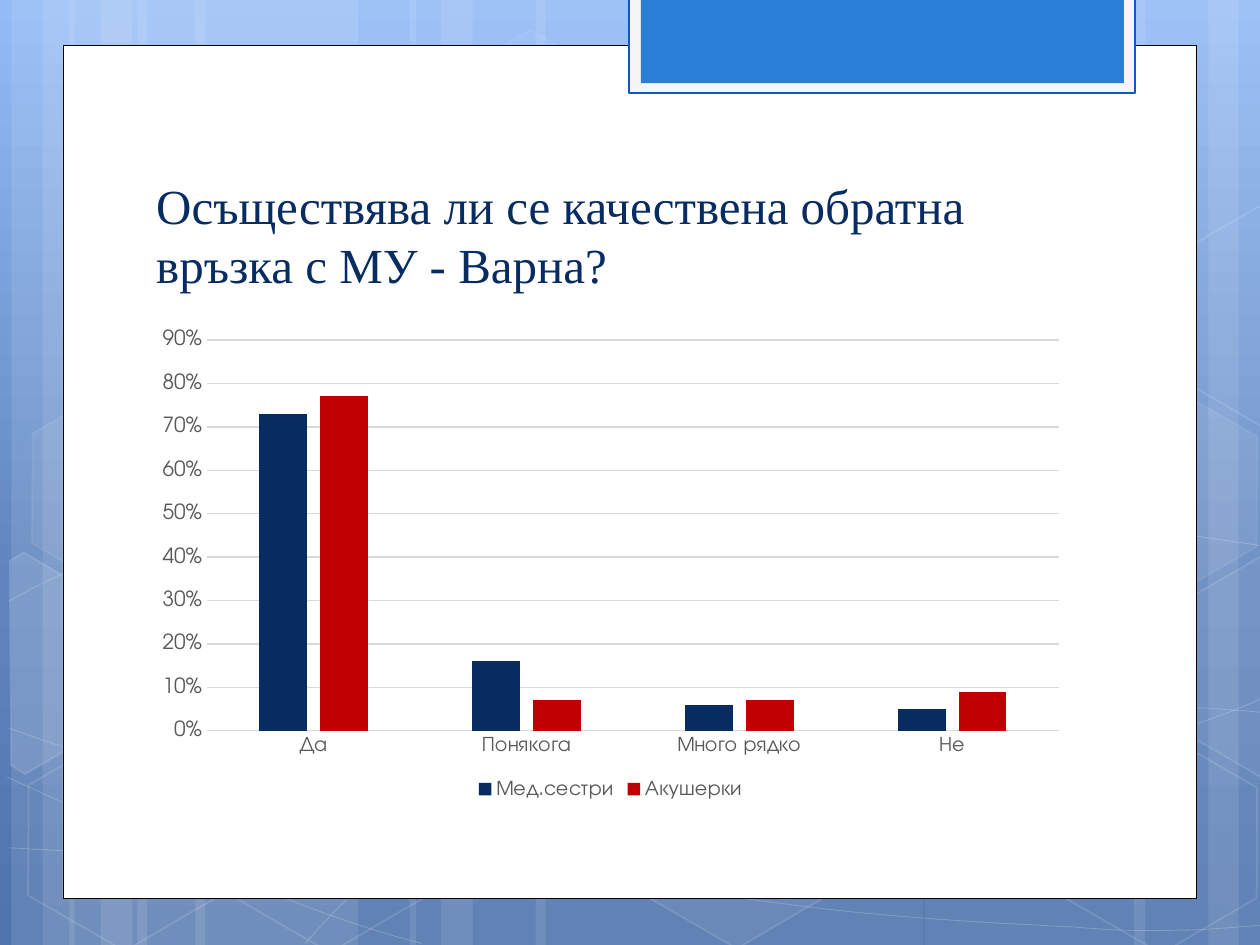
from copy import deepcopy
from math import cos, radians, sin

from lxml import etree
from pptx import Presentation
from pptx import util as u
from pptx.chart import data
from pptx.dml.color import RGBColor
from pptx.enum import chart as ch
from pptx.enum import shapes, text
from pptx.oxml import ns

WHITE = RGBColor(0xFF, 0xFF, 0xFF)
BLACK = RGBColor(0, 0, 0)
NAVY = RGBColor(0x07, 0x2C, 0x62)
RED = RGBColor(0xC0, 0, 0)
BLUE = RGBColor(0x29, 0x7F, 0xD5)
EDGE = RGBColor(0x0E, 0x58, 0xC4)
PALE = RGBColor(0xF5, 0xF5, 0xF5)
GRAY = RGBColor(0x59, 0x59, 0x59)
GRID = RGBColor(0xD9, 0xD9, 0xD9)
SKY = [(0, RGBColor(0x93, 0xBB, 0xF6)), (0.62, RGBColor(0x60, 0x85, 0xBE)),
       (1, RGBColor(0x4F, 0x74, 0xAD))]
FONT = "TeX Gyre Adventor"
WIDE, HIGH, TURN = 25.4, 19.05, 30

BANDS = [(2.77, 4.45), (0.23, 1.27), (0.86, 2.11), (3.94, 4.45), (1.4, 1.27), (2.03, 2.11),
         (18.64, 4.45), (24.36, 1.27), (22.86, 2.11), (10.8, 7.82), (8.26, 1.27), (8.89, 2.11)]
WAVES = [
    [(0.18, 17.09), (1.55, 17.17), (2.92, 17.25), (4.83, 17.22), (6.73, 17.2), (9.09, 17.15),
     (11.63, 16.89), (14.17, 16.64), (17.78, 16.15), (20.12, 15.67), (22.43, 15.19),
     (24.82, 14.43), (25.58, 14)],
    [(0.18, 12.12), (0.91, 11.71), (1.65, 11.33), (3.07, 10.95), (4.52, 10.57), (6.58, 10.01),
     (8.81, 9.83), (11.07, 9.65), (13.82, 9.63), (16.61, 9.83), (19.41, 10.03),
     (24.05, 10.82), (25.58, 11.02)],
    [(0.15, 15.67), (3.23, 17.07), (6.27, 18.47), (8.51, 19.02)],
    [(0.18, 14.68), (0.97, 14.96), (1.78, 15.24), (3.25, 15.65), (4.72, 16.03), (6.93, 16.66),
     (9.07, 17.09), (11.18, 17.53), (13.84, 17.98), (15.95, 18.24), (18.06, 18.52),
     (20.32, 18.62), (21.67, 18.69), (23.01, 18.8), (23.34, 18.75), (24, 18.75),
     (24.66, 18.72), (25.12, 18.67), (25.58, 18.64)],
    [(6.15, 19.02), (6.6, 18.52), (7.06, 18.01), (7.67, 17.55), (8.28, 17.07), (9.14, 16.59),
     (9.86, 16.23), (10.57, 15.88), (11, 15.72), (11.91, 15.47), (12.85, 15.21),
     (14.55, 14.86), (15.44, 14.68), (16.36, 14.5), (16.48, 14.5), (17.27, 14.45),
     (18.06, 14.38), (19.3, 14.3), (20.17, 14.27), (21.06, 14.25), (22.5, 14.27),
     (22.5, 14.27), (22.5, 14.27), (24.21, 14.27), (24.21, 14.27), (24.66, 14.3),
     (25.1, 14.33), (25.32, 14.35), (25.55, 14.38), (25.48, 14.35), (25.55, 14.38)],
]
HEXES = [(8.48, 0.91, 4, 8), (12.62, 14.96, 6, 12), (0.28, 15.01, 0, 12), (0.36, 7.92, 7, 8),
         (4.42, 15.04, 0, 12), (19.13, 11.51, 10, 12), (21.18, 15.06, 0, 12),
         (21.18, 7.98, 7, 8)]
LEFT = [(0.2, 11.3), (0.48, 11.13), (2.44, 12.27), (2.41, 14.48), (0.51, 15.6), (0.23, 15.42)]
RIGHT = [(23.52, 12.32), (25.45, 11.2), (25.63, 11.33), (25.63, 15.57), (25.45, 15.67),
         (23.52, 14.55)]
UPPER = [(x, y - 7.08) for x, y in RIGHT]
PARTS = [(LEFT, 0.91, 13.61, 10), (RIGHT, 25.02, 13.21, 4), (UPPER, 25.02, 6.13, 0)]


def paint(fill, color, alpha=100):
    """Fill with a colour at an opacity in percent, or with nothing at zero."""
    if not alpha:
        fill.background()
        return
    fill.solid()
    fill.fore_color.rgb = color
    if alpha < 100:
        node = fill._xPr.find(ns.qn("a:solidFill"))[0]
        etree.SubElement(node, ns.qn("a:alpha")).set("val", str(alpha * 1000))


def style(shape, color, alpha=100, edge=WHITE, width=0, clear=100):
    """Set the fill and outline of a shape and drop its shadow."""
    shape.shadow.inherit = False
    paint(shape.fill, color, alpha)
    paint(shape.line.fill, edge, clear if width else 0)
    if width:
        shape.line.width = u.Pt(width)


def block(slide, x, y, w, h, kind=shapes.MSO_SHAPE.RECTANGLE):
    """Add a preset shape in a box."""
    return slide.shapes.add_shape(kind, u.Cm(x), u.Cm(y), u.Cm(w), u.Cm(h))


def trace(slide, x, y, dots, close):
    """Draw an outline through dots measured from a corner."""
    spots = [(u.Cm(x + a), u.Cm(y + b)) for a, b in dots]
    pen = slide.shapes.build_freeform(*spots[0])
    pen.add_line_segments(spots[1:], close=close)
    return pen.convert_to_shape()


def wave(slide, x, y, dots):
    """Draw a cubic curve from its start and control dots."""
    shape = trace(slide, x, y, dots, False)
    legs = shape._element.findall(".//" + ns.qn("a:lnTo"))
    for trio in zip(legs[::3], legs[1::3], legs[2::3]):
        curve = etree.Element(ns.qn("a:cubicBezTo"))
        trio[0].addprevious(curve)
        for leg in trio:
            curve.append(leg[0])
            leg.getparent().remove(leg)
    return shape


def spin(dots, mx, my):
    """Turn dots back around a middle so that the shape's rotation restores them."""
    c, s = cos(radians(TURN)), sin(radians(TURN))
    return [(mx + (x - mx) * c + (y - my) * s, my - (x - mx) * s + (y - my) * c)
            for x, y in dots]


def sky(slide):
    """Paint the three-stop background."""
    fill = slide.background.fill
    fill.gradient()
    fill.gradient_angle = 270
    first = slide._element.find(".//" + ns.qn("a:gs"))
    first.addnext(deepcopy(first))
    for stop, (place, color) in zip(fill.gradient_stops, SKY):
        stop.position = place
        stop.color.rgb = color


def decor(slide, x, y, w, h):
    """Lay the bands, waves and hexagons over the background."""
    for left, width in BANDS:
        style(block(slide, x + left, y, width, h), WHITE, 10)
    for dots in WAVES:
        style(wave(slide, x, y, dots), WHITE, 0, WHITE, 0.5, 20)
    for left, top, alpha, clear in HEXES:
        cell = block(slide, x + left, y + top, 4.45, 3.86, shapes.MSO_SHAPE.HEXAGON)
        cell.adjustments[0] = 0.285
        cell.rotation = TURN
        style(cell, WHITE, alpha, WHITE, 1, clear)
    for dots, mx, my, alpha in PARTS:
        part = trace(slide, x, y, spin(dots, mx, my), True)
        part.rotation = TURN
        style(part, WHITE, alpha, WHITE, 1, 12)


def panel(slide, x, y, w, h):
    """Place the white sheet and the blue tab on its top edge."""
    style(block(slide, x, y, w, h), WHITE, 100, BLACK, 0.5)
    style(block(slide, x + 11.41, y - 0.96, 10.21, 1.93), PALE, 100, EDGE, 1.25)
    style(block(slide, x + 11.65, y - 0.96, 9.74, 1.73), BLUE)


def title(slide, x, y, w, h):
    """Write the question at the bottom of its box."""
    frame = slide.shapes.add_textbox(u.Cm(x), u.Cm(y), u.Cm(w), u.Cm(h)).text_frame
    frame.word_wrap = True
    frame.vertical_anchor = text.MSO_ANCHOR.BOTTOM
    frame.text = "Осъществява ли се качествена обратна връзка с МУ - Варна?"
    font = frame.paragraphs[0].runs[0].font
    font.name, font.size, font.color.rgb = "Times New Roman", u.Pt(28), NAVY


def graph(slide, x, y, w, h):
    """Chart the answers of both groups."""
    table = data.CategoryChartData(number_format="0%")
    table.categories = ["Да", "Понякога", "Много рядко", "Не"]
    table.add_series("Мед.сестри", [0.73, 0.16, 0.06, 0.05])
    table.add_series("Акушерки", [0.77, 0.07, 0.07, 0.09])
    chart = slide.shapes.add_chart(ch.XL_CHART_TYPE.COLUMN_CLUSTERED, u.Cm(x), u.Cm(y),
                                   u.Cm(w), u.Cm(h), table).chart
    chart.has_title = False
    chart.font.name, chart.font.size, chart.font.color.rgb = FONT, u.Pt(11.9), GRAY
    chart.has_legend = True
    chart.legend.position = ch.XL_LEGEND_POSITION.BOTTOM
    chart.legend.include_in_layout = False
    plot = chart.plots[0]
    plot.gap_width, plot.overlap, plot.vary_by_categories = 219, -27, False
    for bar, color in zip(plot.series, [NAVY, RED]):
        paint(bar.format.fill, color)
    cats, vals = chart.category_axis, chart.value_axis
    for axis in (cats, vals):
        axis.major_tick_mark = axis.minor_tick_mark = ch.XL_TICK_MARK.NONE
    vals.tick_labels.number_format = "0%"
    vals.tick_labels.number_format_is_linked = False
    vals.format.line.fill.background()
    for line in (cats.format.line, vals.major_gridlines.format.line):
        line.color.rgb, line.width = GRID, u.Pt(0.75)


def main():
    """Build the slide and save it."""
    deck = Presentation()
    deck.slide_width, deck.slide_height = u.Cm(WIDE), u.Cm(HIGH)
    slide = deck.slides.add_slide(deck.slide_layouts[6])
    sky(slide)
    decor(slide, 0, 0, WIDE, HIGH)
    panel(slide, 1.27, 0.91, 22.86, 17.2)
    title(slide, 2.9, 2.85, 19.5, 3.18)
    graph(slide, 2.9, 6.46, 18.82, 9.75)
    deck.save("out.pptx")


if __name__ == "__main__":
    main()
